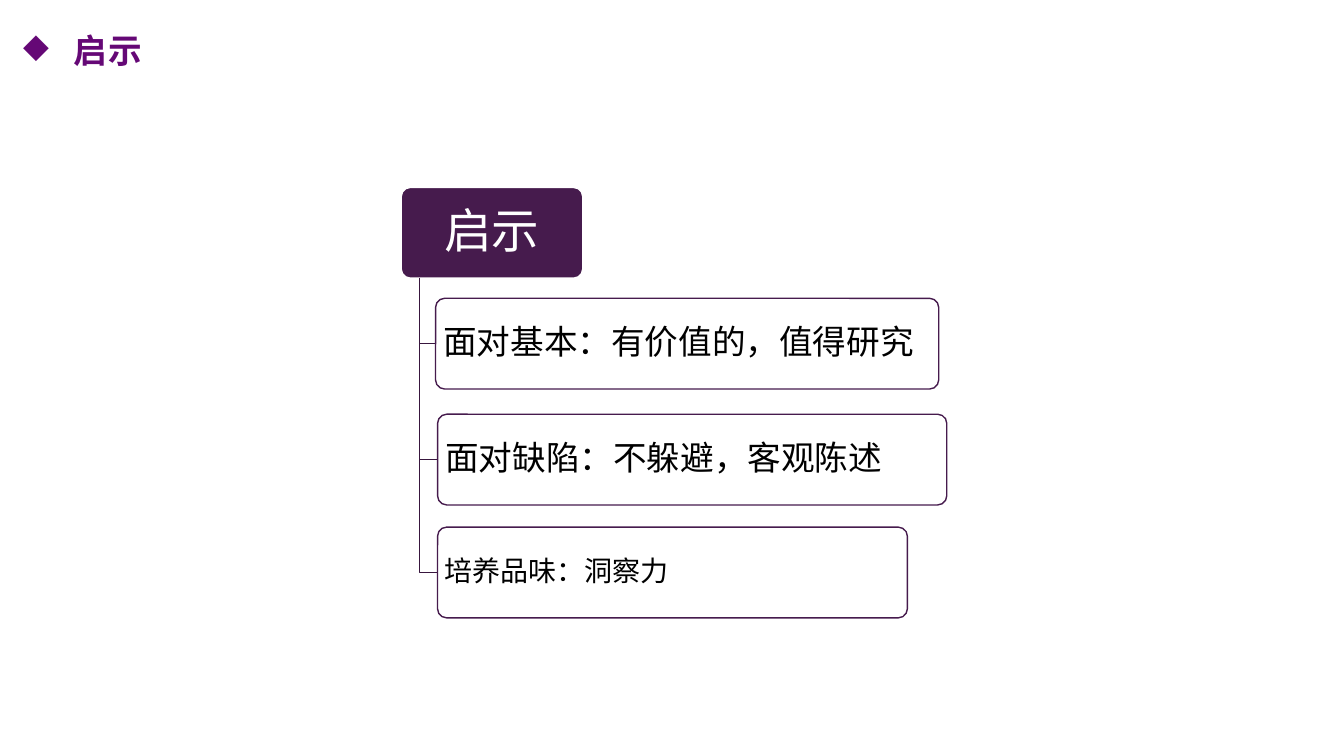
from lxml import etree
from pptx import Presentation
from pptx import util as u
from pptx.dml import color
from pptx.enum import shapes, text
from pptx.oxml import ns

PLUM = "461B4D"
BRANCH = "38163E"
WHITE = "FFFFFF"
TRUNK_X = 4.16
ROOT_BOTTOM = 2.76
BOX_HEIGHT = 0.9


def rgb(value):
    return color.RGBColor.from_string(value)


class Deck:
    def __init__(self):
        self.presentation = Presentation()
        self.presentation.slide_width = u.Inches(13.33)
        self.presentation.slide_height = u.Inches(7.5)
        self.slide = self.presentation.slides.add_slide(self.presentation.slide_layouts[5])

    def style(self, paragraph, size, hex_color, font="Arial", bold=False):
        paragraph.font.size = u.Pt(size)
        paragraph.font.name = font
        paragraph.font.bold = bold
        paragraph.font.color.rgb = rgb(hex_color)

    def title(self, wording):
        shape = self.slide.shapes.title
        shape.left, shape.top, shape.width, shape.height = map(u.Inches, (0.13, 0.11, 5.43, 0.77))
        frame = shape.text_frame
        frame.text = wording
        frame.auto_size = text.MSO_AUTO_SIZE.NONE
        frame.vertical_anchor = text.MSO_ANCHOR.MIDDLE
        paragraph = frame.paragraphs[0]
        paragraph.alignment = text.PP_ALIGN.LEFT
        properties = paragraph._p.get_or_add_pPr()
        properties.set("marL", str(u.Inches(0.5)))
        properties.set("indent", str(-u.Inches(0.5)))
        etree.SubElement(properties, ns.qn("a:buChar")).set("char", "◆")
        self.style(paragraph, 24, "650876", "Times New Roman", True)
        properties.find(ns.qn("a:defRPr")).set("spc", "100")

    def box(self, left, top, width, wording, size, fill, line, font_color, inset, align, opacity=100):
        shape = self.slide.shapes.add_shape(
            shapes.MSO_SHAPE.ROUNDED_RECTANGLE,
            *map(u.Inches, (left, top, width, BOX_HEIGHT)))
        shape.shadow.inherit = False
        shape.adjustments[0] = 0.1
        shape.fill.solid()
        shape.fill.fore_color.rgb = rgb(fill)
        if opacity < 100:
            fill_color = shape._element.spPr.find(ns.qn("a:solidFill"))[0]
            etree.SubElement(fill_color, ns.qn("a:alpha")).set("val", str(opacity * 1000))
        shape.line.color.rgb = rgb(line)
        shape.line.width = u.Pt(1)
        frame = shape.text_frame
        frame.word_wrap = True
        frame.vertical_anchor = text.MSO_ANCHOR.MIDDLE
        frame.margin_left = frame.margin_right = u.Inches(inset)
        frame.margin_top = frame.margin_bottom = u.Inches(0.03)
        frame.text = wording
        paragraph = frame.paragraphs[0]
        paragraph.alignment = align
        paragraph.line_spacing = 0.9
        self.style(paragraph, size, font_color)

    def branch(self, end_x, end_y):
        points = [(u.Inches(x), u.Inches(y)) for x, y in ((TRUNK_X, end_y), (end_x, end_y))]
        builder = self.slide.shapes.build_freeform(u.Inches(TRUNK_X), u.Inches(ROOT_BOTTOM))
        builder.add_line_segments(points, close=False)
        shape = builder.convert_to_shape()
        shape.shadow.inherit = False
        shape.fill.background()
        shape.line.color.rgb = rgb(BRANCH)
        shape.line.width = u.Pt(1)


def main():
    deck = Deck()
    deck.title("启示")
    deck.box(3.98, ROOT_BOTTOM - BOX_HEIGHT, 1.8, "启示", 34, PLUM, WHITE, WHITE,
             0.07, text.PP_ALIGN.CENTER)
    lessons = [
        (4.32, 2.96, 4.99, "面对基本：有价值的，值得研究", 24, 0.05),
        (4.34, 4.11, 5.05, "面对缺陷：不躲避，客观陈述", 24, 0.05),
        (4.34, 5.23, 4.66, "培养品味：洞察力", 20, 0.04),
    ]
    for left, top, width, wording, size, inset in lessons:
        deck.branch(left, top + BOX_HEIGHT / 2)
        deck.box(left, top, width, wording, size, WHITE, PLUM, "000000",
                 inset, text.PP_ALIGN.LEFT, opacity=90)
    deck.presentation.save("out.pptx")


if __name__ == "__main__":
    main()
